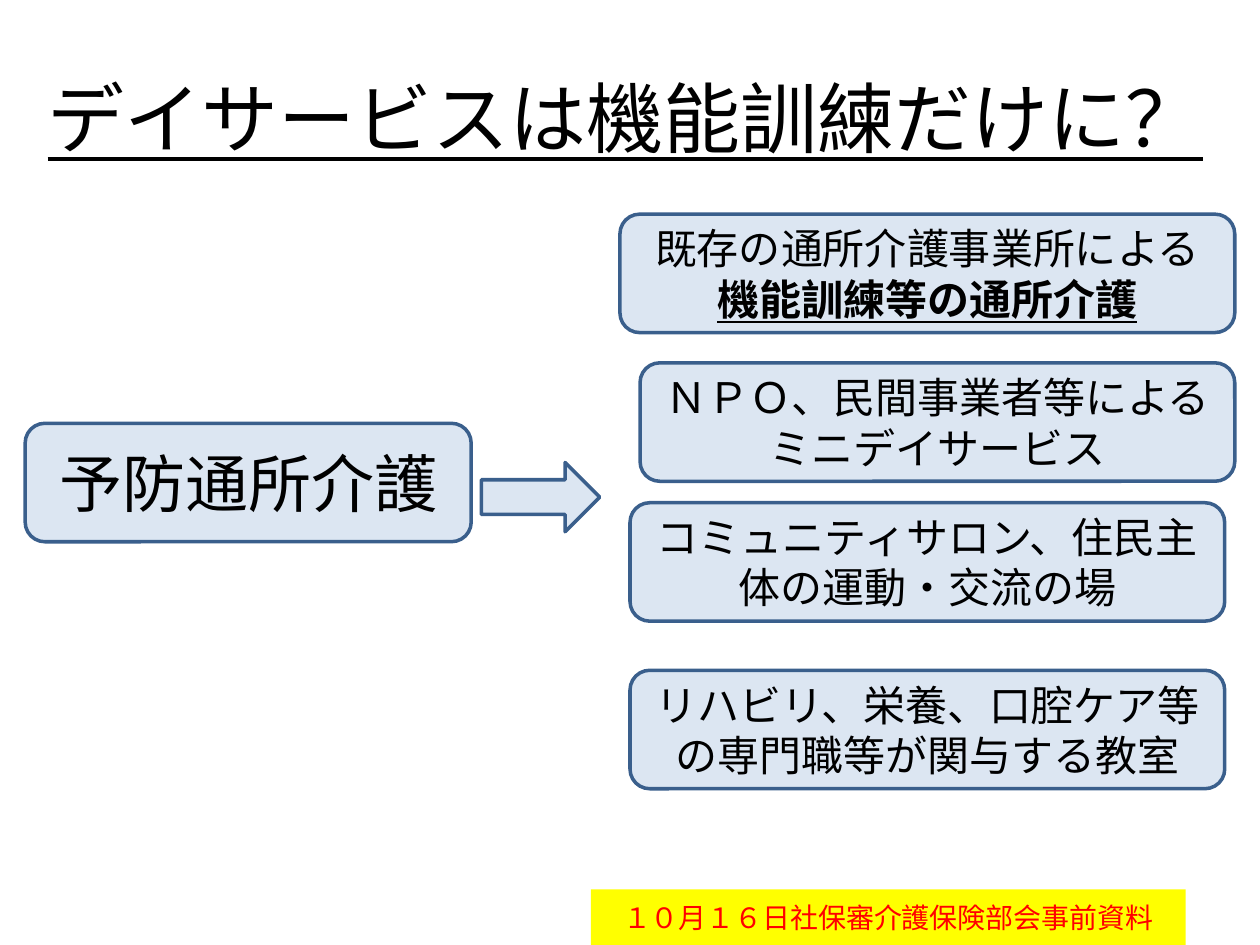
import pptx
import pptx.util
from pptx.dml.color import RGBColor
from pptx.enum.shapes import MSO_SHAPE
from pptx.enum.text import MSO_ANCHOR, MSO_AUTO_SIZE, PP_ALIGN
from pptx.util import Inches

COLORS = {
    "paper": "FFFFFF",
    "ink": "000000",
    "panel": "DCE6F2",
    "outline": "3A5F8C",
    "note": "FFFF00",
    "note_text": "FF0000",
}
FONT = "Calibri"
BOX_HEIGHT = 0.94
EMPHASIS = {"bold": True, "underline": True}

# Left, top, width and paragraphs of each service that takes over
SERVICES = [
    (4.92, 1.7, 4.88, [("既存の通所介護事業所による", {}),
                       ("機能訓練等の通所介護", EMPHASIS)]),
    (5.08, 2.88, 4.72, [("ＮＰＯ、民間事業者等によるミニデイサービス", {})]),
    (5, 3.99, 4.72, [("コミュニティサロン、住民主体の運動・交流の場", {})]),
    (5, 5.32, 4.72, [("リハビリ、栄養、口腔ケア等の専門職等が関与する教室", {})]),
]


def color(name):
    return RGBColor.from_string(COLORS[name])


def write(shape, paragraphs, size, ink="ink"):
    """Fill a shape with centred paragraphs of (text, format values)."""
    frame = shape.text_frame
    frame.word_wrap = True
    frame.auto_size = MSO_AUTO_SIZE.NONE
    frame.vertical_anchor = MSO_ANCHOR.MIDDLE
    for index, (text, extra) in enumerate(paragraphs):
        paragraph = frame.add_paragraph() if index else frame.paragraphs[0]
        paragraph.alignment = PP_ALIGN.CENTER
        run = paragraph.add_run()
        run.text = text
        values = {"name": FONT, "size": pptx.util.Pt(size), **extra}
        for attribute, value in values.items():
            setattr(run.font, attribute, value)
        run.font.color.rgb = color(ink)


def add_title(slide, text):
    title = slide.shapes.title
    place = {"left": 0.2, "top": 0.3, "width": 9.53, "height": 1.25}
    for attribute, value in place.items():
        setattr(title, attribute, Inches(value))
    title.fill.solid()
    title.fill.fore_color.rgb = color("paper")
    write(title, [(text, {"underline": True})], 44)


def add_panel(slide, preset, box, fill="panel", outline="outline"):
    panel = slide.shapes.add_shape(preset, *map(Inches, box))
    panel.shadow.inherit = False
    panel.fill.solid()
    panel.fill.fore_color.rgb = color(fill)
    if outline:
        panel.line.color.rgb = color(outline)
        panel.line.width = pptx.util.Pt(2)
    else:
        panel.line.fill.background()
    return panel


def main():
    deck = pptx.Presentation()
    deck.slide_width, deck.slide_height = Inches(10), Inches(7.5)
    slide = deck.slides.add_slide(deck.slide_layouts[5])
    add_title(slide, "デイサービスは機能訓練だけに？")

    # Present service and the arrow to its successors
    prevention = add_panel(slide, MSO_SHAPE.ROUNDED_RECTANGLE,
                           (0.2, 3.36, 3.54, BOX_HEIGHT))
    write(prevention, [("予防通所介護", {})], 36)
    add_panel(slide, MSO_SHAPE.RIGHT_ARROW, (3.82, 3.67, 0.94, 0.55))

    # Successor services
    for left, top, width, paragraphs in SERVICES:
        service = add_panel(slide, MSO_SHAPE.ROUNDED_RECTANGLE,
                            (left, top, width, BOX_HEIGHT))
        write(service, paragraphs, 24)

    # Source note
    source_note = add_panel(slide, MSO_SHAPE.RECTANGLE,
                            (4.69, 7.06, 4.72, 0.44), "note", None)
    write(source_note, [("１０月１６日社保審介護保険部会事前資料", {})], 16, "note_text")

    deck.save("out.pptx")


if __name__ == "__main__":
    main()
